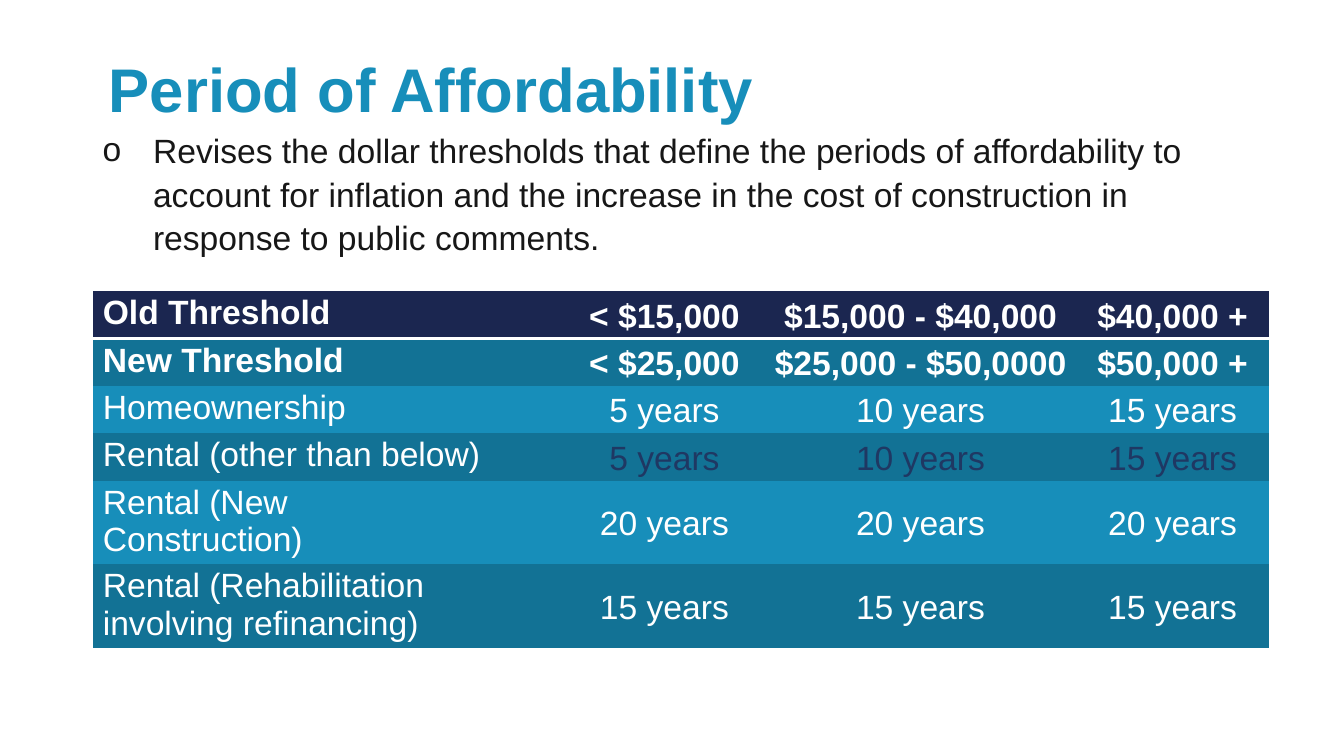
from lxml import etree
from pptx import Presentation
from pptx import util as u
from pptx.dml.color import RGBColor
from pptx.enum import text
from pptx.oxml import ns

NAVY, TEAL, BLUE = "1B2650", "127295", "178EBA"
WHITE, INK, DARK_BLUE = "FFFFFF", "171717", "1F3863"
NO_GRID_STYLE = "{2D5ABB26-0587-4C30-8999-92F81FD0307C}"
COLUMN_WIDTHS = (4.67, 2, 3.08, 1.92)
LABEL_INDENT = 0.1
WRAPPED_LABEL_MARGIN = 1
THRESHOLDS = [
    (("Old Threshold", "< $15,000", "$15,000 - $40,000", "$40,000 +"), 0.47, NAVY, WHITE, True),
    (("New Threshold", "< $25,000", "$25,000 - $50,0000", "$50,000 +"), 0.47, TEAL, WHITE, True),
    (("Homeownership", "5 years", "10 years", "15 years"), 0.47, BLUE, WHITE, False),
    (("Rental (other than below)", "5 years", "10 years", "15 years"), 0.47, TEAL, DARK_BLUE, False),
    (("Rental (New Construction)", "20 years", "20 years", "20 years"), 0.81, BLUE, WHITE, False),
    (("Rental (Rehabilitation involving refinancing)", "15 years", "15 years", "15 years"),
     0.81, TEAL, WHITE, False),
]


def color(value):
    """Turn a hex string into a colour."""
    return RGBColor.from_string(value)


def style_runs(paragraph, size, hex_color, bold=False):
    """Format every run of a paragraph."""
    for run in paragraph.runs:
        run.font.name = "Arial"
        run.font.size = u.Pt(size)
        run.font.bold = bold
        run.font.color.rgb = color(hex_color)


def add_heading(slide, wording):
    """Place and format the slide title."""
    heading = slide.shapes.title
    heading.left, heading.top = u.Inches(1.08), u.Inches(0.58)
    heading.width, heading.height = u.Inches(7.38), u.Inches(0.67)
    frame = heading.text_frame
    frame.text = wording
    frame.auto_size = text.MSO_AUTO_SIZE.NONE
    frame.vertical_anchor = text.MSO_ANCHOR.MIDDLE
    frame.margin_left = frame.margin_right = frame.margin_top = frame.margin_bottom = 0
    line = frame.paragraphs[0]
    line.alignment = text.PP_ALIGN.LEFT
    line.line_spacing = 0.9
    style_runs(line, 44, BLUE, True)


def add_summary(slide, wording):
    """Add the bulleted statement under the title."""
    summary = slide.shapes.add_textbox(u.Inches(0.92), u.Inches(1.25), u.Inches(11.5), u.Inches(1.31))
    frame = summary.text_frame
    frame.word_wrap = True
    frame.vertical_anchor = text.MSO_ANCHOR.MIDDLE
    point = frame.paragraphs[0]
    point.text = wording
    point.line_spacing = 1.08
    point.space_after = u.Pt(6)
    properties = point._p.get_or_add_pPr()
    properties.set("marL", str(u.Inches(0.5)))
    properties.set("indent", str(u.Inches(-0.5)))
    etree.SubElement(properties, ns.qn("a:buFont"), typeface="Arial")
    etree.SubElement(properties, ns.qn("a:buChar"), char="o")
    style_runs(point, 24, INK)


def add_bottom_rule(cell, hex_color, points):
    """Draw a line under a table cell."""
    rule = etree.Element(ns.qn("a:lnB"), w=str(u.Pt(points)))
    fill = etree.SubElement(rule, ns.qn("a:solidFill"))
    etree.SubElement(fill, ns.qn("a:srgbClr"), val=hex_color)
    cell._tc.get_or_add_tcPr().insert(0, rule)


def fill_cell(cell, wording, fill, hex_color, bold):
    """Write one table cell with its fill and text format."""
    cell.fill.solid()
    cell.fill.fore_color.rgb = color(fill)
    cell.margin_left = cell.margin_right = cell.margin_bottom = 0
    cell.margin_top = u.Inches(0.03)
    cell.text = wording
    entry = cell.text_frame.paragraphs[0]
    entry.space_before = u.Pt(2.5)
    style_runs(entry, 24, hex_color, bold)


def add_threshold_table(slide):
    """Add the table of thresholds and periods."""
    height = sum(row[1] for row in THRESHOLDS)
    table = slide.shapes.add_table(
        len(THRESHOLDS), len(COLUMN_WIDTHS), u.Inches(0.92), u.Inches(2.89),
        u.Inches(sum(COLUMN_WIDTHS)), u.Inches(height)).table
    table.first_row = table.horz_banding = False
    table._tbl.tblPr.find(ns.qn("a:tableStyleId")).text = NO_GRID_STYLE
    for column, width in zip(table.columns, COLUMN_WIDTHS):
        column.width = u.Inches(width)
    for row, (entries, row_height, fill, period_color, bold) in zip(table.rows, THRESHOLDS):
        row.height = u.Inches(row_height)
        label, *periods = row.cells
        fill_cell(label, entries[0], fill, WHITE, bold)
        label.margin_left = u.Inches(LABEL_INDENT)
        if row_height > 0.5:
            label.margin_right = u.Inches(WRAPPED_LABEL_MARGIN)
        for period, wording in zip(periods, entries[1:]):
            fill_cell(period, wording, fill, period_color, bold)
            period.vertical_anchor = text.MSO_ANCHOR.MIDDLE
            period.text_frame.paragraphs[0].alignment = text.PP_ALIGN.CENTER
    for header in table.rows[0].cells:
        add_bottom_rule(header, WHITE, 2)


def main():
    """Build and save the slide."""
    deck = Presentation()
    deck.slide_width, deck.slide_height = u.Inches(13.33), u.Inches(7.5)
    slide = deck.slides.add_slide(deck.slide_layouts[5])
    add_heading(slide, "Period of Affordability")
    add_summary(slide, "Revises the dollar thresholds that define the periods of affordability to "
                       "account for inflation and the increase in the cost of construction in "
                       "response to public comments.")
    add_threshold_table(slide)
    deck.save("out.pptx")


if __name__ == "__main__":
    main()
